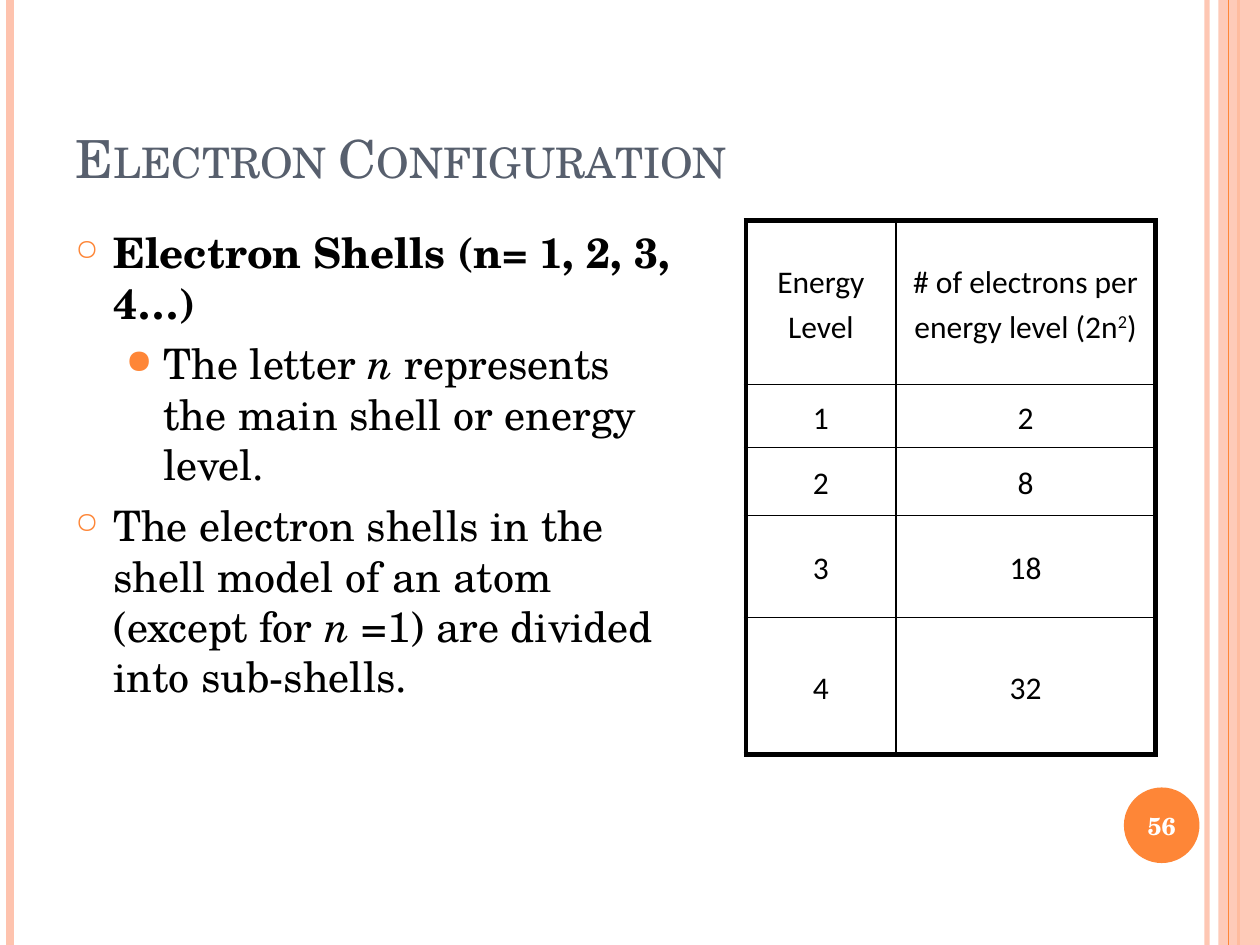
from dataclasses import dataclass

from lxml import etree
from pptx import Presentation
from pptx.dml.color import RGBColor
from pptx.enum.shapes import MSO_CONNECTOR, MSO_SHAPE
from pptx.enum.text import MSO_ANCHOR, MSO_AUTO_SIZE, PP_ALIGN
from pptx.oxml.ns import qn
from pptx.util import Emu, Pt

STRAIGHT = MSO_CONNECTOR.STRAIGHT
RECTANGLE, OVAL = MSO_SHAPE.RECTANGLE, MSO_SHAPE.OVAL
MIDDLE, BOTTOM = MSO_ANCHOR.MIDDLE, MSO_ANCHOR.BOTTOM
LEFT, CENTER = PP_ALIGN.LEFT, PP_ALIGN.CENTER
NO_AUTOFIT = MSO_AUTO_SIZE.NONE
TITLE_ONLY = 5
PX = 9144  # 100 px to the inch
PAGE_WIDTH, PAGE_HEIGHT = 1000, 750


@dataclass(frozen=True)
class Theme:
    serif: str = "TeX Gyre Schola"
    sans: str = "Calibri"
    accent: str = "FE8637"
    pale: str = "FEC3AE"
    heading: str = "575F6D"
    ink: str = "000000"
    white: str = "FFFFFF"
    title_size: int = 30
    body_size: int = 24
    table_size: int = 18
    number_size: int = 14
    outer_border: int = 3
    inner_border: int = 1


THEME = Theme()
BULLETS = [("○", 70, 30), ("●", 80, 70)]  # symbol, size in %, indent in px
BODY = [
    (0, [("Electron Shells (n= 1, 2, 3, 4…)", {"bold": True})]),
    (1, [("The letter ", {}), ("n ", {"italic": True}),
         ("represents the main shell or energy level.", {})]),
    (0, [("The electron shells in the shell model of an atom (except for ", {}),
         ("n ", {"italic": True}), ("=1) are divided into sub-shells.", {})]),
]
SHELL_ROWS = [
    [[("Energy Level", {})],
     [("# of electrons per energy level (2n", {}), ("2", {"baseline": "30000"}), (")", {})]],
    *[[[(str(n), {})], [(str(2 * n * n), {})]] for n in range(1, 5)],
]


def px(*values):
    return [Emu(value * PX) for value in values]


def apply_format(target, formats):
    for name, value in formats.items():
        setattr(target, name, value)


def add_xml(parent, tag, **attributes):
    return etree.SubElement(parent, qn(tag), attributes)


def add_span(para, text, font, size, color, baseline=None, **formats):
    span = para.add_run()
    span.text = text
    apply_format(span.font, {"name": font, "size": Pt(size), **formats})
    span.font.color.rgb = RGBColor.from_string(color)
    if baseline:
        span.font._element.set("baseline", baseline)
    return span


def set_alpha(fill_format, percent):
    color = fill_format._xPr.find(".//" + qn("a:srgbClr"))
    add_xml(color, "a:alpha", val=str(percent * 1000))


def add_filled_shape(page, kind, box, color):
    shape = page.shapes.add_shape(kind, *px(*box))
    shape.shadow.inherit = False
    shape.fill.solid()
    shape.fill.fore_color.rgb = RGBColor.from_string(color)
    shape.line.fill.background()
    return shape


def add_stripe(page, x, color, width, alpha=None):
    stripe = page.shapes.add_connector(STRAIGHT, *px(x, 0, x, PAGE_HEIGHT))
    stripe.line.width = Pt(width)
    stripe.line.color.rgb = RGBColor.from_string(color)
    if alpha:
        set_alpha(stripe.line.fill, alpha)
    add_xml(stripe._element.spPr, "a:effectLst")


def add_edges(page):
    add_stripe(page, 958, THEME.pale, 3, 93)
    add_stripe(page, 8, THEME.pale, 4.5)
    add_stripe(page, 983, THEME.accent, 1.5)
    band = add_filled_shape(page, RECTANGLE, (967, 0, 33, PAGE_HEIGHT), THEME.pale)
    set_alpha(band.fill, 87)
    add_stripe(page, 975, THEME.accent, 0.75)


def add_page_number(page, box, number):
    badge = add_filled_shape(page, OVAL, box, THEME.accent)
    frame = badge.text_frame
    apply_format(frame, {"margin_left": 0, "margin_right": 0, "margin_top": 0,
                         "margin_bottom": 0, "vertical_anchor": MIDDLE, "word_wrap": False})
    para = frame.paragraphs[0]
    para.alignment = CENTER
    add_span(para, str(number), THEME.serif, THEME.number_size, THEME.white, bold=True)


def add_title(page, box, text):
    title = page.shapes.title
    apply_format(title, dict(zip(("left", "top", "width", "height"), px(*box))))
    apply_format(title.text_frame, {"vertical_anchor": BOTTOM, "word_wrap": True,
                                    "auto_size": NO_AUTOFIT})
    para = title.text_frame.paragraphs[0]
    para.alignment = LEFT
    span = add_span(para, text, THEME.serif, THEME.title_size, THEME.heading)
    span.font._element.set("cap", "small")


def set_bullet(para, level):
    symbol, size, indent = BULLETS[level]
    props = para._p.get_or_add_pPr()
    props.set("marL", str(indent * PX))
    props.set("indent", str(-30 * PX))
    add_xml(add_xml(props, "a:buClr"), "a:srgbClr", val=THEME.accent)
    add_xml(props, "a:buSzPct", val=str(size * 1000))
    add_xml(props, "a:buChar", char=symbol)


def add_body(page, box, items):
    frame = page.shapes.add_textbox(*px(*box)).text_frame
    frame.word_wrap = True
    for index, (level, spans) in enumerate(items):
        para = frame.add_paragraph() if index else frame.paragraphs[0]
        apply_format(para, {"level": level, "space_before": Pt(6), "alignment": LEFT})
        set_bullet(para, level)
        for text, formats in spans:
            add_span(para, text, THEME.serif, THEME.body_size, THEME.ink, **formats)


def set_borders(cell, outer_sides):
    """Draw all four sides, heavier where the cell meets the table's edge."""
    props = cell._tc.get_or_add_tcPr()
    for side in "LRTB":
        points = THEME.outer_border if side in outer_sides else THEME.inner_border
        border = add_xml(props, "a:ln" + side, w=str(Pt(points)))
        add_xml(add_xml(border, "a:solidFill"), "a:srgbClr", val=THEME.ink)


def fill_cell(cell, spans, outer_sides):
    set_borders(cell, outer_sides)
    cell.fill.background()
    side_margin, = px(7)
    apply_format(cell, {"margin_left": side_margin, "margin_right": side_margin,
                        "margin_top": 0, "margin_bottom": 0, "vertical_anchor": MIDDLE})
    para = cell.text_frame.paragraphs[0]
    apply_format(para, {"alignment": CENTER, "line_spacing": 1.15, "space_after": Pt(10)})
    for text, formats in spans:
        add_span(para, text, THEME.sans, THEME.table_size, THEME.ink, **formats)


def add_shell_table(page, left, top, widths, heights, rows):
    box = px(left, top, sum(widths), sum(heights))
    table = page.shapes.add_table(len(rows), len(widths), *box).table
    apply_format(table, {"first_row": False, "horz_banding": False})
    for column, width in zip(table.columns, px(*widths)):
        column.width = width
    for row, height in zip(table.rows, px(*heights)):
        row.height = height
    for r, row in enumerate(rows):
        for c, spans in enumerate(row):
            edges = {"L": c == 0, "R": c == len(widths) - 1,
                     "T": r == 0, "B": r == len(rows) - 1}
            fill_cell(table.cell(r, c), spans, [side for side in edges if edges[side]])


def main():
    deck = Presentation()
    deck.slide_width, deck.slide_height = px(PAGE_WIDTH, PAGE_HEIGHT)
    page = deck.slides.add_slide(deck.slide_layouts[TITLE_ONLY])
    add_edges(page)
    add_title(page, (50, 30, 817, 125), "Electron Configuration")
    add_body(page, (50, 175, 492, 533), BODY)
    add_shell_table(page, 592, 175, (119, 206), (130, 50, 54, 81, 109), SHELL_ROWS)
    add_page_number(page, (892, 625, 60, 60), 56)
    deck.save("out.pptx")


if __name__ == "__main__":
    main()
